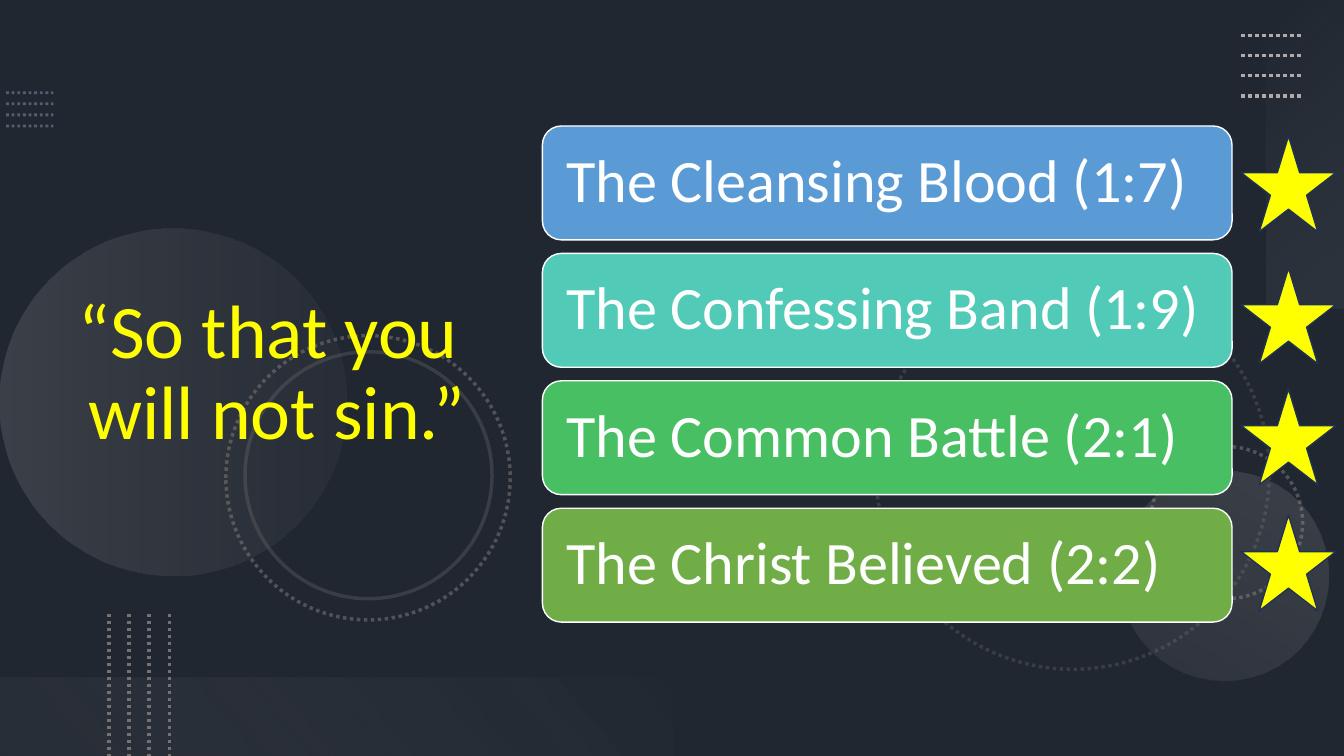
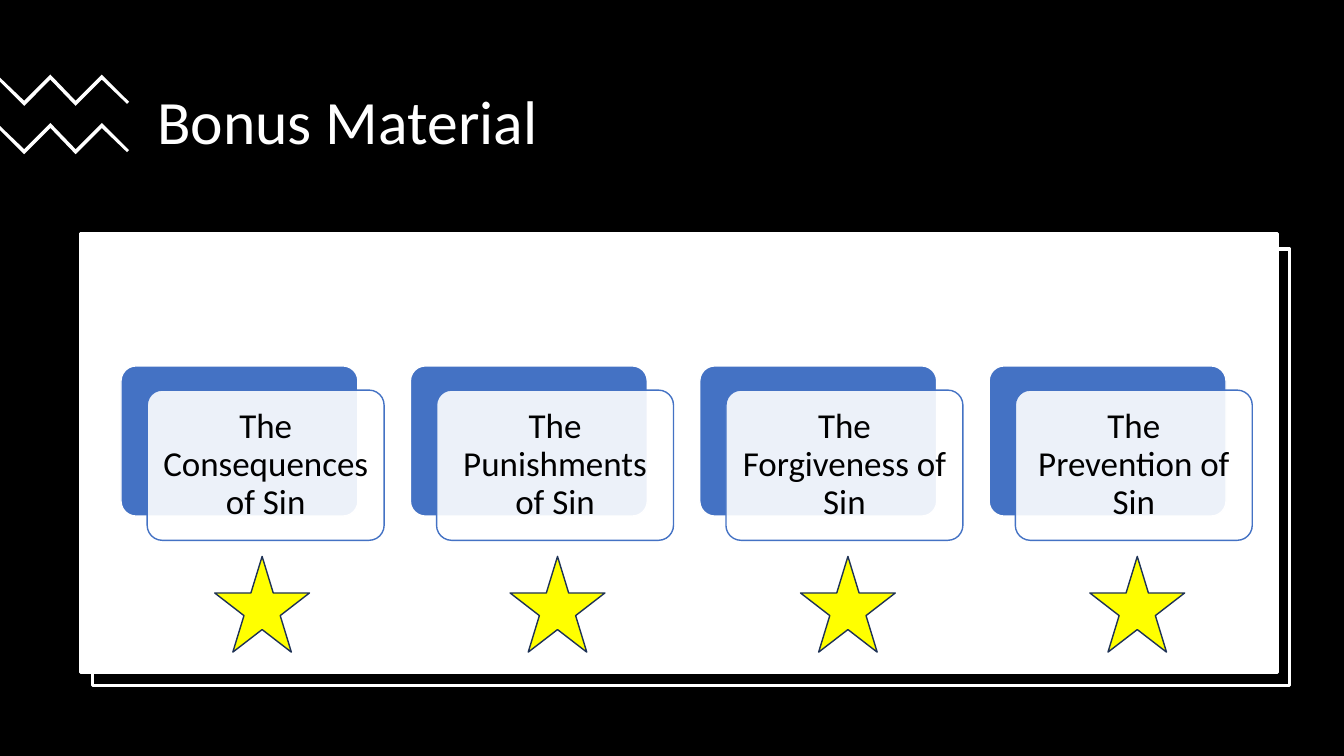
"""Build two slides: four ways not to sin, and four bonus topics."""
from dataclasses import dataclass

from lxml.etree import SubElement
from pptx import Presentation
from pptx.dml.color import RGBColor
from pptx.enum.dml import MSO_LINE
from pptx.enum.shapes import MSO_CONNECTOR, MSO_SHAPE
from pptx.enum.text import MSO_ANCHOR, MSO_AUTO_SIZE, PP_ALIGN
from pptx.oxml import parse_xml
from pptx.oxml.ns import nsdecls, qn
from pptx.util import Inches, Pt


@dataclass(frozen=True)
class Theme:
    font: str = "Calibri"
    slate: str = "44546A"
    white: str = "FFFFFF"
    black: str = "000000"
    yellow: str = "FFFF00"
    navy: str = "1E3256"
    blue: str = "4472C4"
    steel: str = "8497B0"
    silver: str = "AFABAB"
    grey: str = "767171"
    quote_size: int = 54
    title_size: int = 44
    row_size: int = 43
    card_size: int = 25


T = Theme()
WIDTH, HEIGHT = 13.33, 7.5
STAR = (0.94, 0.95)

QUOTE = "“So that you \vwill not sin.”"
ROWS = [
    ("The Cleansing Blood (1:7)", "5B9BD5", 1.35),
    ("The Confessing Band (1:9)", "52CAB8", 2.66),
    ("The Common Battle (2:1)", "49BF64", 3.86),
    ("The Christ Believed (2:2)", "70AD47", 5.11),
]
BONUS_TITLE = "Bonus Material"
CARDS = [
    ("The Consequences of Sin", 2.13),
    ("The Punishments of Sin", 5.06),
    ("The Forgiveness of Sin", 7.94),
    ("The Prevention of Sin", 10.81),
]

DOT_LINES = [
    *[((0.06, 0.92 + 0.11 * i), (0.53, 0.92 + 0.11 * i), T.steel, 2, 50) for i in range(4)],
    *[((12.31, 0.35 + 0.2 * i), (12.91, 0.35 + 0.2 * i), T.silver, 2.5, 100) for i in range(4)],
    *[((1.08 + 0.2 * i, 6.09), (1.08 + 0.2 * i, 7.5), T.grey, 2.5, 100) for i in range(4)],
]
RINGS = [
    (8.69, 2.74, 3.9, True, 30),
    (11.41, 4.43, 1.51, True, 60),
    (2.24, 3.33, 2.82, True, 60),
    (2.43, 3.49, 2.45, False, 30),
]
GLOWS = [
    (MSO_SHAPE.OVAL, (0, 2.27, 3.44, 3.44), 270, 90, [(0, T.silver, 20), (100, T.grey, 10)]),
    (MSO_SHAPE.OVAL, (11.1, 4.67, 2.08, 2.08), 210, 90, [(0, T.silver, 10), (100, T.silver, 20)]),
    (MSO_SHAPE.RECTANGLE, (11.42, 1.14, 3.06, 0.78), 270, 140, [(0, "F5F5F5", 0), (100, T.silver, 10)]),
    (MSO_SHAPE.RECTANGLE, (0, 6.72, 6.67, 0.78), 180, 140, [(10, T.grey, 10), (100, "F1F0F0", 0)]),
]
ZIGZAG = [
    (0.5, 0.74), (0.75, 1), (1.01, 0.74), (1.28, 1.01), (1.26, 1.03), (1.01, 0.79),
    (0.75, 1.05), (0.5, 0.79), (0.24, 1.05), (0, 0.81), (0, 0.77), (0.24, 1),
]


def rgb(color):
    return RGBColor.from_string(color)


def set_alpha(sp, where, percent):
    if percent < 100:
        for clr in sp.element.xpath(f"./p:spPr/{where}/a:srgbClr"):
            SubElement(clr, qn("a:alpha")).set("val", str(percent * 1000))


def set_line(sp, color, width, dotted=False, alpha=100):
    sp.line.color.rgb = rgb(color)
    sp.line.width = Pt(width)
    if dotted:
        sp.line.dash_style = MSO_LINE.ROUND_DOT
    set_alpha(sp, "a:ln/a:solidFill", alpha)


def paint(sp, fill=None, line=None, width=1, alpha=100):
    sp.shadow.inherit = False
    if fill:
        sp.fill.solid()
        sp.fill.fore_color.rgb = rgb(fill)
        set_alpha(sp, "a:solidFill", alpha)
    else:
        sp.fill.background()
    if line:
        set_line(sp, line, width)
    else:
        sp.line.fill.background()
    return sp


def add_box(s, kind, box, fill=None, line=None, width=1, alpha=100):
    sp = s.shapes.add_shape(kind, *map(Inches, box))
    return paint(sp, fill, line, width, alpha)


def add_glow(s, kind, box, rotation, angle, stops):
    sp = add_box(s, kind, box)
    sp.rotation = rotation
    marks = "".join(
        f'<a:gs pos="{pos * 1000}"><a:srgbClr val="{color}">'
        f'<a:alpha val="{alpha * 1000}"/></a:srgbClr></a:gs>'
        for pos, color, alpha in stops
    )
    gradient = parse_xml(
        f'<a:gradFill {nsdecls("a")} rotWithShape="1"><a:gsLst>{marks}</a:gsLst>'
        f'<a:lin ang="{angle * 60000}" scaled="0"/></a:gradFill>'
    )
    no_fill = sp.element.xpath("./p:spPr/a:noFill")[0]
    no_fill.getparent().replace(no_fill, gradient)


def add_dots(s, start, end, color, width, alpha):
    points = map(Inches, (*start, *end))
    cxn = s.shapes.add_connector(MSO_CONNECTOR.STRAIGHT, *points)
    set_line(cxn, color, width, True, alpha)
    SubElement(cxn.element.spPr, qn("a:effectLst"))


def add_star(s, left, top):
    add_box(s, MSO_SHAPE.STAR_5_POINT, (left, top, *STAR), T.yellow, T.navy)


def set_text(sp, text, size, color, align, inset=None):
    tf = sp.text_frame
    tf.word_wrap = True
    tf.auto_size = MSO_AUTO_SIZE.NONE
    tf.vertical_anchor = MSO_ANCHOR.MIDDLE
    if inset is not None:
        tf.margin_left = tf.margin_right = tf.margin_top = tf.margin_bottom = Inches(inset)
    p = tf.paragraphs[0]
    p.text = text
    p.alignment = align
    p.line_spacing = 0.9
    p.font.name = T.font
    p.font.size = Pt(size)
    p.font.color.rgb = rgb(color)


def add_title(s, text, box, size, color, align):
    title = s.shapes.title
    title.left, title.top, title.width, title.height = map(Inches, box)
    title.element.getparent().append(title.element)
    set_text(title, text, size, color, align)


def add_slide(prs, background, shade):
    s = prs.slides.add_slide(prs.slide_layouts[5])
    s.background.fill.solid()
    s.background.fill.fore_color.rgb = rgb(background)
    add_box(s, MSO_SHAPE.RECTANGLE, (0, 0, WIDTH, HEIGHT), T.black, alpha=shade)
    return s


def build_quote(prs):
    s = add_slide(prs, T.slate, 53)
    for left, top, size, dotted, alpha in RINGS:
        ring = add_box(s, MSO_SHAPE.OVAL, (left, top, size, size))
        set_line(ring, T.grey, 2.5, dotted, alpha)
    for glow in GLOWS:
        add_glow(s, *glow)
    for dots in DOT_LINES:
        add_dots(s, *dots)
    add_title(s, QUOTE, (0.45, 2.78, 4.59, 1.87), T.quote_size, T.yellow, PP_ALIGN.CENTER)
    for i, (text, color, star_top) in enumerate(ROWS):
        box = (5.38, 1.25 + 1.264 * i, 6.84, 1.13)
        row = add_box(s, MSO_SHAPE.ROUNDED_RECTANGLE, box, color, T.white)
        set_text(row, text, T.row_size, T.white, PP_ALIGN.LEFT, 0.18)
        add_star(s, 12.31, star_top)


def build_bonus(prs):
    s = add_slide(prs, T.white, 100)
    add_title(s, BONUS_TITLE, (1.46, 0.62, 10.66, 1.23), T.title_size, T.white, PP_ALIGN.LEFT)
    for drop in (0, 0.48):
        points = [(Inches(x), Inches(y + drop)) for x, y in ZIGZAG]
        outline = s.shapes.build_freeform(*points[0])
        outline.add_line_segments(points[1:], close=True)
        paint(outline.convert_to_shape(), T.white)
    add_box(s, MSO_SHAPE.RECTANGLE, (0.92, 2.47, 11.87, 4.33), T.black, T.white, 2.25)
    add_box(s, MSO_SHAPE.RECTANGLE, (0.8, 2.32, 11.87, 4.35), T.white, T.white, 2.25)
    for i, (text, star_left) in enumerate(CARDS):
        left = 1.2 + 2.87 * i
        back = add_box(s, MSO_SHAPE.ROUNDED_RECTANGLE, (left, 3.63, 2.35, 1.49), T.blue, T.white)
        card = add_box(s, MSO_SHAPE.ROUNDED_RECTANGLE, (left + 0.26, 3.87, 2.35, 1.49),
                       T.white, T.blue, alpha=90)
        back.adjustments[0] = card.adjustments[0] = 0.1
        set_text(card, text, T.card_size, T.black, PP_ALIGN.CENTER, 0.09)
        add_star(s, star_left, 5.52)


def main():
    prs = Presentation()
    prs.slide_width, prs.slide_height = Inches(WIDTH), Inches(HEIGHT)
    build_quote(prs)
    build_bonus(prs)
    prs.save("out.pptx")


if __name__ == "__main__":
    main()
